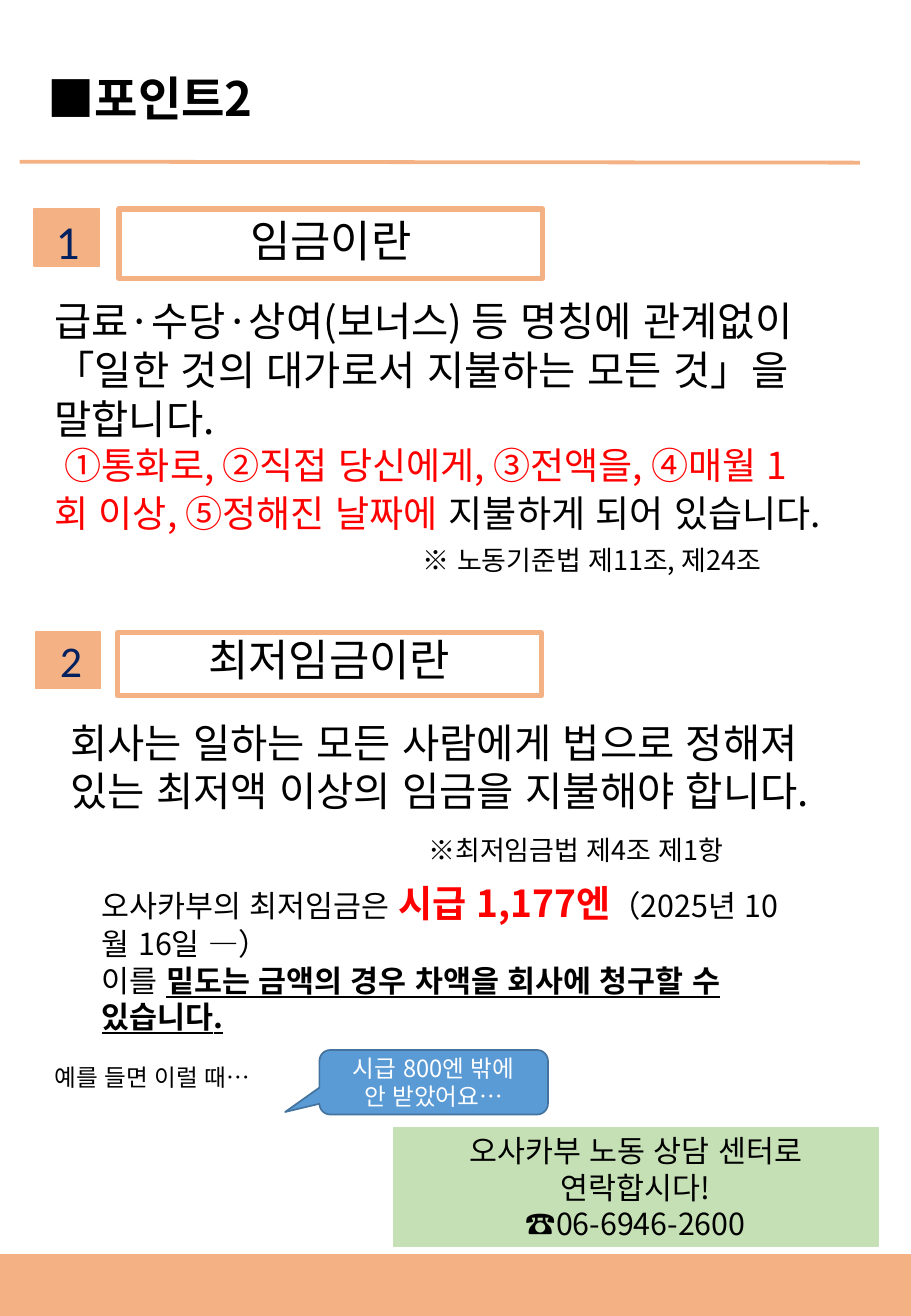
from lxml import etree
from pptx import Presentation
from pptx import util as u
from pptx.dml.color import RGBColor
from pptx.enum import lang, shapes, text
from pptx.oxml.ns import qn

KOREAN = "Noto Sans CJK KR"
JAPANESE = "Noto Sans CJK JP"
ORANGE, BLACK, RED, WHITE, NAVY = "F4B183", "000000", "FF0000", "FFFFFF", "002060"
CENTER = text.PP_ALIGN.CENTER
TOP, MIDDLE = text.MSO_ANCHOR.TOP, text.MSO_ANCHOR.MIDDLE


def rgb(value):
    return RGBColor.from_string(value)


def cm(values):
    return [u.Cm(v) for v in values]


def add_run(p, words, size, color=BLACK, font=KOREAN, bold=False, underline=False):
    for i, line in enumerate(words.split("\n")):
        if i:
            p.add_line_break()
        r = p.add_run()
        r.text = line
        f = r.font
        f.size, f.bold, f.name = u.Pt(size), bold, font
        f.color.rgb = rgb(color)
        f.language_id = lang.MSO_LANGUAGE_ID.KOREAN
        if underline:
            f.underline = True
        ea = etree.Element(qn("a:ea"), typeface=font)
        r._r.rPr.find(qn("a:latin")).addnext(ea)


def write(tf, paragraphs, align=text.PP_ALIGN.LEFT, anchor=TOP, heading=False):
    tf.word_wrap = True
    tf.vertical_anchor = anchor
    for i, runs in enumerate(paragraphs):
        p = tf.add_paragraph() if i else tf.paragraphs[0]
        p.alignment = align
        if heading:
            p.line_spacing, p.space_before = 0.9, u.Pt(10)
        for run in runs:
            add_run(p, *run)


def add_text(s, at, paragraphs, align=text.PP_ALIGN.LEFT, side=0.25):
    tf = s.shapes.add_textbox(*cm(at)).text_frame
    tf.margin_left = tf.margin_right = u.Cm(side)
    write(tf, paragraphs, align)
    tf.auto_size = text.MSO_AUTO_SIZE.SHAPE_TO_FIT_TEXT


def add_box(s, at, fill, line, width=1, kind=shapes.MSO_SHAPE.RECTANGLE):
    sp = s.shapes.add_shape(kind, *cm(at))
    sp.shadow.inherit = False
    sp.fill.solid()
    sp.fill.fore_color.rgb = rgb(fill)
    sp.line.color.rgb = rgb(line)
    sp.line.width = u.Pt(width)
    return sp


def add_rule(s, ends):
    line = s.shapes.add_connector(shapes.MSO_CONNECTOR.STRAIGHT, *cm(ends))
    line.line.color.rgb = rgb(ORANGE)
    line.line.width = u.Pt(2.25)
    etree.SubElement(line._element.spPr, qn("a:effectLst"))


def add_title(s):
    title = s.shapes.title
    title.left, title.top, title.width, title.height = cm((0.74, 1.32, 11.58, 1.45))
    write(title.text_frame, [[("■", 28, BLACK, JAPANESE, True),
                              ("포인트2", 28, BLACK, KOREAN, True)]])
    title.text_frame.auto_size = text.MSO_AUTO_SIZE.SHAPE_TO_FIT_TEXT


def add_heading(s, badge, number, number_at, size, words, box, anchor):
    add_box(s, (*badge, 1.37, 1.19), ORANGE, ORANGE, 0.75)
    sp = add_box(s, box, WHITE, ORANGE, 3)
    write(sp.text_frame, [[(words, 26)]], CENTER, anchor, heading=True)
    add_text(s, number_at, [[(number, size, NAVY, "Calibri")]], CENTER, 0.08)


def add_wages(s):
    add_heading(s, (0.71, 4.37), "1", (0.97, 4.32, 0.89, 1.45), 28,
                "임금이란", (2.49, 4.37, 8.86, 1.45), MIDDLE)
    add_text(s, (0.89, 6.07, 16.51, 6.25), [
        [("급료·수당·상여(보너스) 등 명칭에 관계없이 "
          "「일한 것의 대가로서 지불하는 모든 것」을 말합니다.", 24)],
        [(" ①통화로, ②직접 당신에게, ③전액을, ④매월 1회 이상, ⑤정해진 날짜에", 22, RED),
         (" ", 24), ("지불하게 되어 있습니다.", 22)]])
    add_text(s, (8.59, 11.23, 8.81, 0.94), [[("※ 노동기준법 제11조, 제24조", 16)]])


def add_minimum_wage(s):
    add_heading(s, (0.74, 13.21), "2", (0.89, 13.13, 1.19, 1.37), 26,
                "최저임금이란", (2.46, 13.23, 8.86, 1.32), TOP)
    add_text(s, (1.22, 14.88, 16.56, 3.33), [
        [("회사는 일하는 모든 사람에게 법으로 정해져 있는 "
          "최저액 이상의 임금을 지불해야 합니다.", 24)]])
    add_text(s, (8.71, 17.3, 7.21, 0.94), [[("※최저임금법 제4조 제1항", 16)]])
    add_text(s, (1.88, 18.29, 14.86, 3.51), [
        [("오사카부의 최저임금은 ", 18), ("시급 1,177엔", 22, RED, KOREAN, True),
         ("（2025년 10월 16일 ―）", 18)],
        [("이를 ", 18),
         ("밑도는 금액의 경우 차액을 회사에 청구할 수 있습니다.",
          18, BLACK, KOREAN, True, True)]])


def add_example(s):
    add_text(s, (0.89, 22.1, 5.13, 0.86), [[("예를 들면 이럴 때…", 14)]])
    bubble = add_box(s, (6.68, 21.95, 4.78, 1.35), "5B9BD5", "43739E",
                     kind=shapes.MSO_SHAPE.ROUNDED_RECTANGULAR_CALLOUT)
    for i, value in enumerate((-0.65, 0.46, 0.17)):
        bubble.adjustments[i] = value
    write(bubble.text_frame, [[("시급 800엔 밖에\n안 받았어요…", 14, WHITE)]],
          CENTER, MIDDLE)


def add_contact(s):
    add_box(s, (0, 26.24, 19.05, 1.27), ORANGE, ORANGE)
    sp = add_box(s, (8.23, 23.57, 10.13, 2.49), "C5E0B4", "C5E0B4")
    write(sp.text_frame, [[("오사카부 노동 상담 센터로\n연락합시다!", 18)],
                          [("☎06-6946-2600", 18)]], CENTER, MIDDLE)


def main():
    prs = Presentation()
    prs.slide_width, prs.slide_height = cm((19.05, 27.51))
    s = prs.slides.add_slide(prs.slide_layouts[5])
    add_title(s)
    add_rule(s, (0.41, 3.38, 17.98, 3.4))
    add_wages(s)
    add_minimum_wage(s)
    add_example(s)
    add_contact(s)
    prs.save("out.pptx")


if __name__ == "__main__":
    main()
